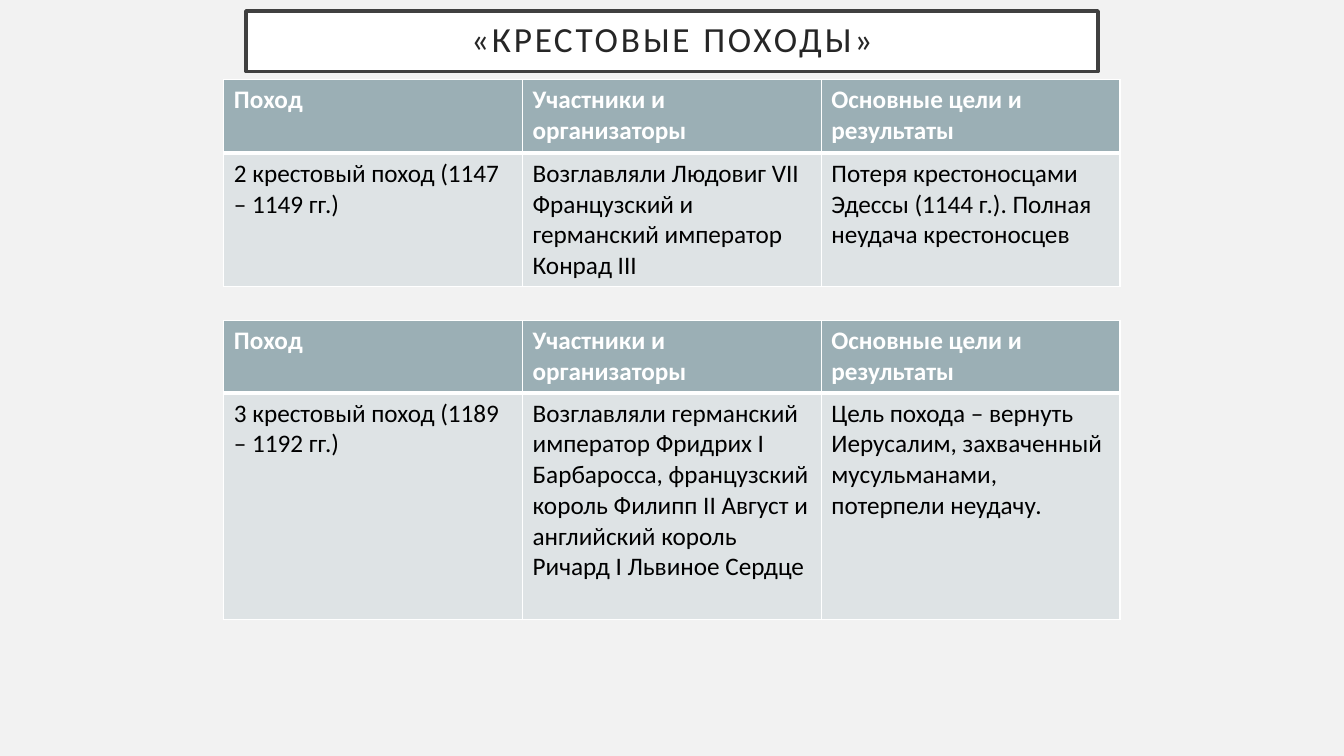
from lxml.etree import SubElement
from pptx import Presentation
from pptx.dml.color import RGBColor
from pptx.enum.shapes import MSO_SHAPE
from pptx.enum.text import MSO_ANCHOR, PP_ALIGN
from pptx.oxml.ns import qn
from pptx.util import Emu, Pt

PX = 9144
COLORS = {
    "back": "F2F2F2", "white": "FFFFFF", "frame": "404040", "title": "262626",
    "head": "9BAFB5", "body": "DEE3E5", "text": "000000",
}
HEAD = ["Поход", "Участники и организаторы", "Основные цели и результаты"]
SECOND = [
    "2 крестовый поход (1147 – 1149 гг.)",
    "Возглавляли Людовиг VII Французский и германский император Конрад III",
    "Потеря крестоносцами Эдессы (1144 г.). Полная неудача крестоносцев",
]
THIRD = [
    "3 крестовый поход (1189 – 1192 гг.)",
    "Возглавляли германский император Фридрих I Барбаросса, французский король "
    "Филипп II Август и английский король Ричард I Львиное Сердце",
    "Цель похода – вернуть Иерусалим, захваченный мусульманами, потерпели неудачу.",
]


def px(*nums):
    return [Emu(num * PX) for num in nums]


def color(name):
    return RGBColor.from_string(COLORS[name])


def paint(fill, name):
    fill.solid()
    fill.fore_color.rgb = color(name)


def write(frame, text, size=18, ink="text", bold=False,
          align=PP_ALIGN.LEFT, lead=None, track=0):
    frame.word_wrap = True
    para = frame.paragraphs[0]
    para.alignment = align
    para.line_spacing = lead
    run = para.add_run()
    run.text = text
    font = run.font
    font.name, font.size, font.bold = "Calibri", Pt(size), bold
    font.color.rgb = color(ink)
    if track:
        font._element.set("spc", str(track * 100))


def border(cell, widths):
    props = cell._tc.get_or_add_tcPr()
    for side, width in widths.items():
        line = SubElement(props, qn(f"a:ln{side}"), w=str(Pt(width)))
        fill = SubElement(line, qn("a:solidFill"))
        SubElement(fill, qn("a:srgbClr"), val=COLORS["white"])


def title(slide, box, text):
    shape = slide.shapes.add_shape(MSO_SHAPE.RECTANGLE, *px(*box))
    shape.shadow.inherit = False
    paint(shape.fill, "white")
    paint(shape.line.fill, "frame")
    shape.line.width = Pt(2.5)
    frame = shape.text_frame
    frame.vertical_anchor = MSO_ANCHOR.MIDDLE
    frame.margin_left, frame.margin_top, frame.margin_right, frame.margin_bottom = px(20, 20, 20, 20)
    write(frame, text, size=25.2, ink="title", align=PP_ALIGN.CENTER, lead=0.9, track=2)


def grid(slide, box, top, body):
    left, upper, width, height = box
    table = slide.shapes.add_table(2, len(HEAD), *px(*box)).table
    for col in table.columns:
        col.width = Emu(width * PX // len(HEAD))
    table.rows[0].height, table.rows[1].height = px(top, height - top)
    for row, texts in enumerate([HEAD, body]):
        first = row == 0
        for col, text in enumerate(texts):
            cell = table.cell(row, col)
            border(cell, {"L": 1, "R": 1, "T": 1 if first else 3, "B": 3 if first else 1})
            paint(cell.fill, "head" if first else "body")
            write(cell.text_frame, text, ink="white" if first else "text", bold=first)


def main():
    deck = Presentation()
    deck.slide_width, deck.slide_height = px(1333, 750)
    slide = deck.slides.add_slide(deck.slide_layouts[6])
    paint(slide.background.fill, "back")
    title(slide, (244, 11, 845, 60), "«КРЕСТОВЫЕ ПОХОДЫ»")
    grid(slide, (222, 79, 889, 204), 73, SECOND)
    grid(slide, (222, 318, 889, 297), 72, THIRD)
    deck.save("out.pptx")


if __name__ == "__main__":
    main()
